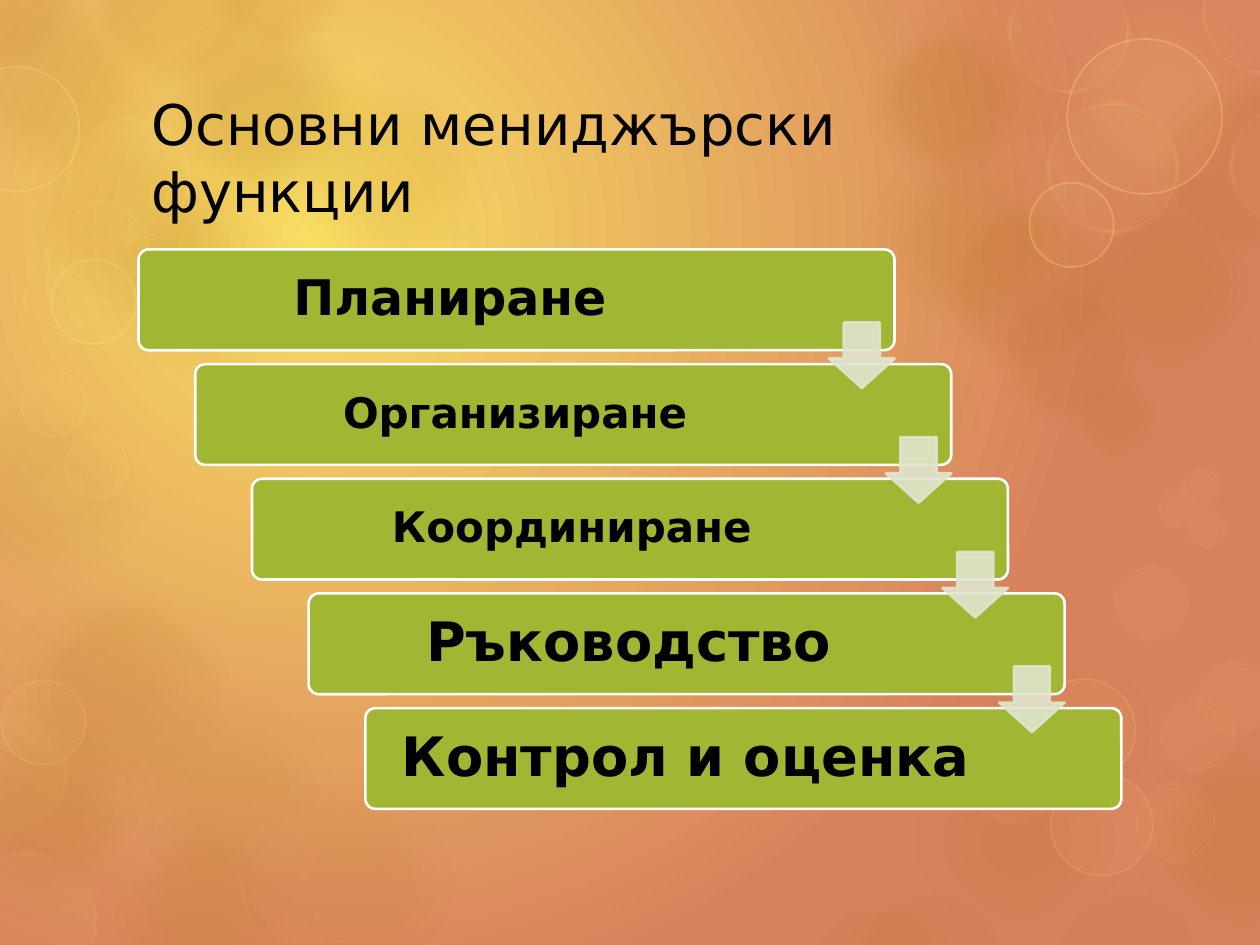
from lxml.etree import SubElement as Sub
from pptx import Presentation
from pptx.dml.color import RGBColor
from pptx.enum.shapes import MSO_SHAPE as Shape
from pptx.enum.text import MSO_ANCHOR as Anchor, MSO_AUTO_SIZE as Fit, PP_ALIGN as Align
from pptx.oxml.ns import qn
from pptx.util import Inches, Pt

YELLOW = RGBColor(0xF8, 0xDD, 0x62)
ORANGE = RGBColor(0xD8, 0x82, 0x5D)
BROWN = RGBColor(0xAE, 0x6D, 0x11)
SAND = RGBColor(0xF1, 0xBD, 0x74)
GOLD = RGBColor(0xFF, 0xE2, 0x81)
GREEN = RGBColor(0xA1, 0xB6, 0x33)
PALE = RGBColor(0xE0, 0xE5, 0xCE)
WHITE = RGBColor(0xFF, 0xFF, 0xFF)
BLACK = RGBColor(0, 0, 0)
FONT = "DejaVu Sans"

TITLE = "Основни мениджърски функции"
STEPS = [("Планиране ", 28), ("Организиране", 24), ("Координиране", 24),
         ("Ръководство", 31), ("Контрол и оценка", 31)]

# Soft spots without outline: fill, diameter, (left, top, opacity %)
SPOTS = [
    (BROWN, 2.09, [
        (-0.25, 4.42, 8), (0.57, 1.2, 10), (2.05, 0.31, 10), (0.57, 6.27, 16),
        (-0.55, -0.32, 14), (1.01, -0.18, 20), (0, 0.72, 15), (6.69, -0.29, 10),
        (8.2, 1.2, 15), (8.81, 5.62, 16), (7.29, 4.77, 5), (-0.68, 5.41, 16),
        (0.77, 5.24, 8), (6.69, 0.86, 15), (7.06, 5.62, 10), (1.73, 5.96, 8),
        (-0.69, 2.82, 8)]),
    (GOLD, 2.09, [(8.2, -0.32, 10)]),
    (BROWN, 1.33, [(6.75, 2.62, 10)]),
]

# Outlined rings: fill, fill %, line, width, line %, soft edge, (left, top, diameter)
RINGS = [
    (BROWN, 10, SAND, 14, 6, 10, [
        (9.18, 0.65, 1.37), (6.94, 0.23, 1.14), (7.52, 1.59, 1.33),
        (7.89, 2.24, 1.14), (8.47, 2.91, 0.79), (0.75, -0.65, 1.31),
        (1.64, -0.74, 1.13), (-0.57, -0.58, 1.14)]),
    (BROWN, 6, SAND, 14, 4, 10, [
        (0.3, 4.73, 1.53), (6.33, 7.1, 1.25), (6.7, 7.01, 1.36),
        (8.29, 7.01, 1.33)]),
    (GOLD, 5, GOLD, 1, 15, 0, [
        (0.01, 5.4, 0.67), (8.34, 6.14, 0.81), (8.2, 5.39, 0.81),
        (0.17, 2.95, 0.51), (0.52, 3.46, 0.5)]),
    (GOLD, 5, GOLD, 5, 15, 4, [
        (-0.36, 6.75, 1.14), (-0.44, 5.64, 0.98), (7.63, 5.73, 0.81),
        (9, 6.2, 0.66), (8.83, 4.48, 0.61), (9.2, 5.53, 0.61),
        (9.5, 5.24, 0.6), (9.37, 3.7, 0.33), (9.18, 3.87, 0.33),
        (9.41, 4.03, 0.33), (0.3, 3.7, 0.39)]),
    (GOLD, 5, GOLD, 1, 30, 0, [
        (-0.36, 0.53, 0.99), (0.41, 2.06, 0.67), (8.47, 0.31, 1.23),
        (8.17, 1.45, 0.67)]),
    (GOLD, 5, GOLD, 5, 30, 4, [
        (0.52, 0.92, 1), (0.35, 1.59, 0.85), (0.17, 2.1, 0.57),
        (7.99, -0.23, 0.98), (9.53, -0.39, 0.99), (9.75, 0.82, 1),
        (8.3, 0.8, 1.06)]),
]

BAR_X, BAR_Y, BAR_W, BAR_H = 1.1, 1.98, 6, 0.8
STEP_X, STEP_Y = 0.45, 0.91
ARROW = 0.52


def paint(fill, color, share=100):
    """Fill with a solid colour at the given opacity in percent."""
    fill.solid()
    fill.fore_color.rgb = color
    if share < 100:
        # The choice element holds the colour that takes the alpha
        tone = fill._xPr.find(qn("a:solidFill"))[0]
        Sub(tone, qn("a:alpha"), val=str(share * 1000))


def draw(kind, x, y, w, h, color, share=100, line=None, width=0, clear=100):
    shape = slide.shapes.add_shape(kind, *map(Inches, (x, y, w, h)))
    shape.shadow.inherit = False
    paint(shape.fill, color, share)
    if line is None:
        shape.line.fill.background()
    else:
        shape.line.width = Pt(width)
        paint(shape.line.fill, line, clear)
    return shape


def soften(shape, size):
    effects = shape.element.spPr.find(qn("a:effectLst"))
    Sub(effects, qn("a:softEdge"), rad=str(Pt(size)))


def style(para, size, bold=False):
    font = para.runs[0].font
    font.name, font.size, font.bold = FONT, Pt(size), bold
    font.color.rgb = BLACK


deck = Presentation()
deck.slide_width, deck.slide_height = Inches(10), Inches(7.5)
slide = deck.slides.add_slide(deck.slide_layouts[5])

# Radial background
back = slide.background.fill
back.gradient()
for stop, color in zip(back.gradient_stops, (YELLOW, ORANGE)):
    stop.color.rgb = color
grad = slide.element.find(".//" + qn("a:gradFill"))
grad.remove(grad.find(qn("a:lin")))
glow = Sub(grad, qn("a:path"), path="circle")
Sub(glow, qn("a:fillToRect"), l="50000", t="50000", r="100000", b="100000")

for color, size, spots in SPOTS:
    for x, y, share in spots:
        soften(draw(Shape.OVAL, x, y, size, size, color, share), 25)
for color, share, line, width, clear, soft, rings in RINGS:
    for x, y, size in rings:
        ring = draw(Shape.OVAL, x, y, size, size, color, share, line, width, clear)
        if soft:
            soften(ring, soft)

title = slide.shapes.title
title.left, title.top, title.width, title.height = map(Inches, (1.1, 0.74, 7.79, 1.01))
frame = title.text_frame
frame.text = TITLE
frame.word_wrap, frame.auto_size = True, Fit.NONE
frame.vertical_anchor = Anchor.MIDDLE
frame.paragraphs[0].alignment = Align.LEFT
style(frame.paragraphs[0], 32)
slide.shapes._spTree.append(title.element)  # bring in front of the circles

for i, (text, size) in enumerate(STEPS):
    bar = draw(Shape.ROUNDED_RECTANGLE, BAR_X + i * STEP_X, BAR_Y + i * STEP_Y,
               BAR_W, BAR_H, GREEN, 100, WHITE, 1.5)
    bar.adjustments[0] = 0.1
    frame = bar.text_frame
    frame.text = text
    frame.word_wrap, frame.vertical_anchor = True, Anchor.MIDDLE
    frame.margin_left, frame.margin_right = Inches(0.1), Inches(1.02)
    para = frame.paragraphs[0]
    para.alignment, para.line_spacing = Align.CENTER, 0.9
    style(para, size, True)

for i in range(len(STEPS) - 1):
    arrow = draw(Shape.DOWN_ARROW, BAR_X + BAR_W - ARROW + i * STEP_X,
                 BAR_Y + 0.58 + i * STEP_Y, ARROW, ARROW, PALE, 90, PALE, 1.5, 90)
    arrow.adjustments[0], arrow.adjustments[1] = 0.55, 0.45

deck.save("out.pptx")
